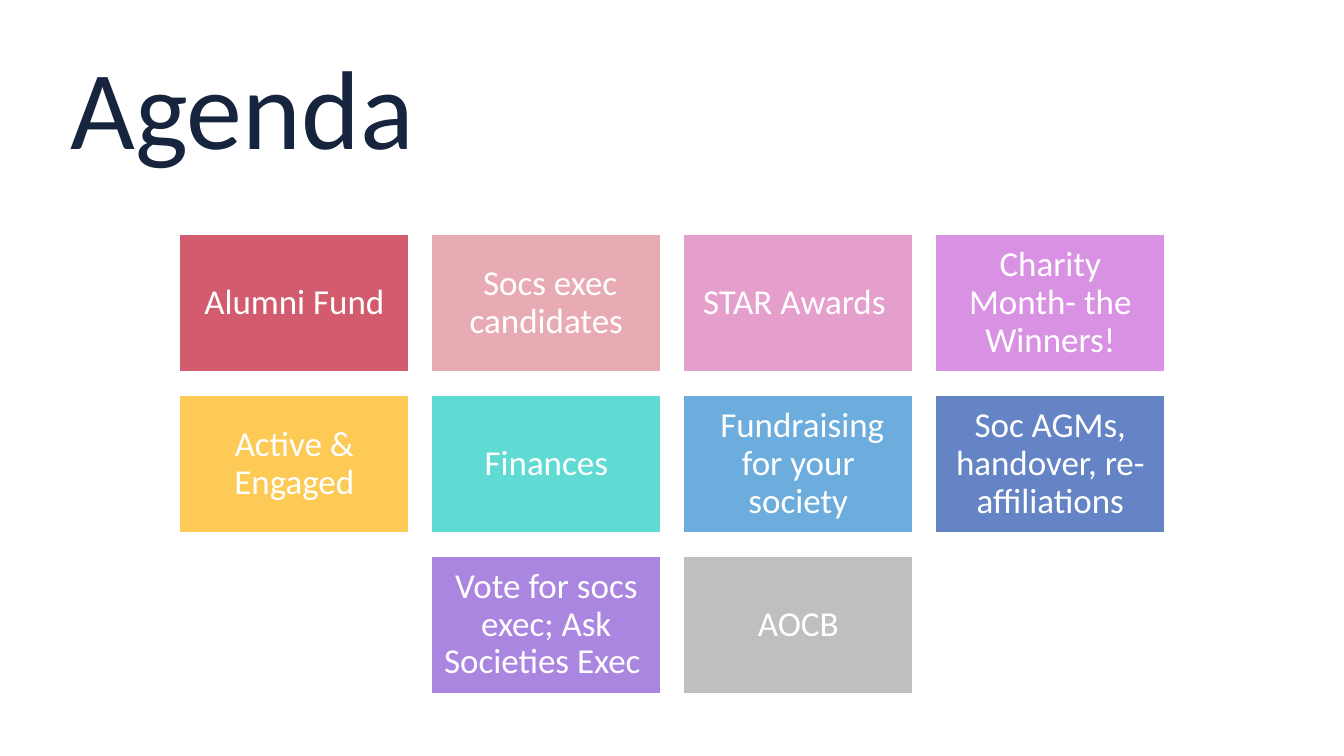
from typing import NamedTuple

from pptx import Presentation
from pptx.dml.color import RGBColor
from pptx.enum.shapes import MSO_SHAPE
from pptx.enum.text import MSO_ANCHOR, PP_ALIGN
from pptx.slide import Slide
from pptx.text.text import TextFrame
from pptx.util import Pt

FONT = "Calibri"
WHITE = RGBColor(0xFF, 0xFF, 0xFF)
NAVY = RGBColor(0x17, 0x24, 0x3E)
RED = RGBColor(0xD2, 0x5C, 0x6D)
ROSE = RGBColor(0xE8, 0xAB, 0xB4)
PINK = RGBColor(0xE5, 0x9F, 0xCC)
ORCHID = RGBColor(0xD9, 0x92, 0xE3)
YELLOW = RGBColor(0xFD, 0xCA, 0x55)
TURQUOISE = RGBColor(0x5F, 0xDB, 0xD3)
SKY = RGBColor(0x6C, 0xAD, 0xDD)
BLUE = RGBColor(0x64, 0x84, 0xC6)
PURPLE = RGBColor(0xAA, 0x86, 0xE1)
GREY = RGBColor(0xBF, 0xBF, 0xBF)

COLUMNS = 4
GRID_LEFT, GRID_TOP = 128.4, 167.6
TILE_WIDTH, TILE_HEIGHT = 163.6, 98
COLUMN_STEP, ROW_STEP = 180, 114.8


class Topic(NamedTuple):
    label: str
    fill: RGBColor


TOPICS = [
    Topic("Alumni Fund", RED),
    Topic(" Socs exec candidates", ROSE),
    Topic("STAR Awards ", PINK),
    Topic("Charity Month- the Winners!", ORCHID),
    Topic("Active & Engaged", YELLOW),
    Topic("Finances", TURQUOISE),
    Topic(" Fundraising for your society", SKY),
    Topic("Soc AGMs, handover, re-affiliations", BLUE),
    Topic("Vote for socs exec; Ask Societies Exec ", PURPLE),
    Topic("AOCB", GREY),
]


def write(frame: TextFrame, text: str, size: float, color: RGBColor, align: PP_ALIGN) -> None:
    frame.word_wrap = True
    frame.vertical_anchor = MSO_ANCHOR.MIDDLE
    frame.text = text
    para = frame.paragraphs[0]
    para.alignment = align
    para.line_spacing = 0.9
    for span in para.runs:
        span.font.name = FONT
        span.font.size = Pt(size)
        span.font.color.rgb = color


def add_tile(page: Slide, topic: Topic, left: float, top: float) -> None:
    tile = page.shapes.add_shape(
        MSO_SHAPE.RECTANGLE, Pt(left), Pt(top), Pt(TILE_WIDTH), Pt(TILE_HEIGHT)
    )
    tile.shadow.inherit = False
    tile.fill.solid()
    tile.fill.fore_color.rgb = topic.fill
    tile.line.color.rgb = WHITE
    tile.line.width = Pt(1)
    frame = tile.text_frame
    frame.margin_left = frame.margin_right = Pt(7.2)
    frame.margin_top = frame.margin_bottom = Pt(7.2)
    write(frame, topic.label, 25, WHITE, PP_ALIGN.CENTER)


def add_grid(page: Slide, topics: list[Topic]) -> None:
    """Lay the topics out in rows, centring a row that is not full."""
    for row, start in enumerate(range(0, len(topics), COLUMNS)):
        row_topics = topics[start:start + COLUMNS]
        indent = (COLUMNS - len(row_topics)) / 2
        for column, topic in enumerate(row_topics):
            left = GRID_LEFT + (indent + column) * COLUMN_STEP
            add_tile(page, topic, left, GRID_TOP + row * ROW_STEP)


def main() -> None:
    deck = Presentation()
    deck.slide_width, deck.slide_height = Pt(960), Pt(540)
    page = deck.slides.add_slide(deck.slide_layouts[6])
    title_box = page.shapes.add_textbox(Pt(43.2), Pt(28.8), Pt(873.4), Pt(104.4))
    write(title_box.text_frame, "Agenda", 80, NAVY, PP_ALIGN.LEFT)
    add_grid(page, TOPICS)
    deck.save("out.pptx")


if __name__ == "__main__":
    main()
